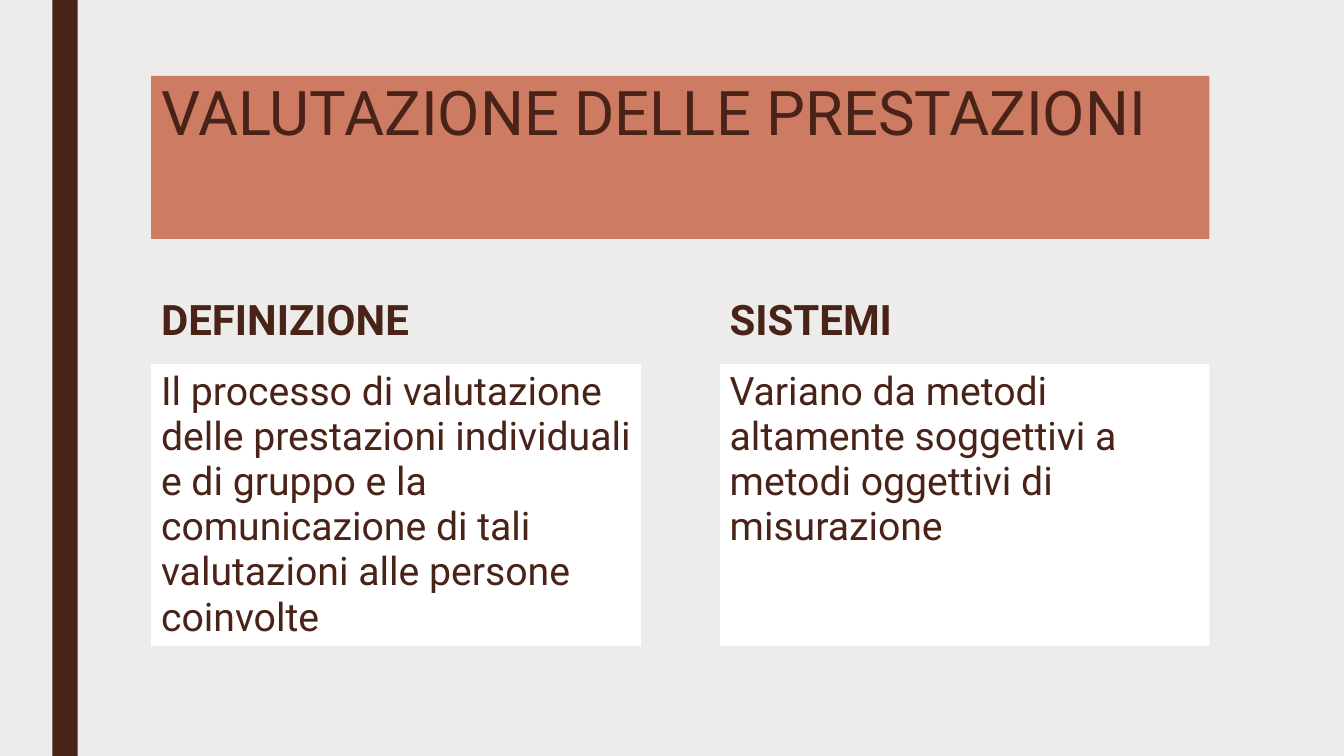
from dataclasses import dataclass

from pptx import Presentation
from pptx.dml.color import RGBColor
from pptx.enum.shapes import MSO_SHAPE
from pptx.enum.text import MSO_ANCHOR, MSO_AUTO_SIZE, PP_ALIGN
from pptx.util import Cm, Pt

RECTANGLE = MSO_SHAPE.RECTANGLE
TOP, BOTTOM = MSO_ANCHOR.TOP, MSO_ANCHOR.BOTTOM
NO_AUTOFIT = MSO_AUTO_SIZE.NONE
LEFT = PP_ALIGN.LEFT

TITLE = "VALUTAZIONE DELLE PRESTAZIONI"
COLUMNS = [
    ("DEFINIZIONE",
     "Il processo di valutazione delle prestazioni individuali e di gruppo "
     "e la comunicazione di tali valutazioni alle persone coinvolte"),
    ("SISTEMI",
     "Variano da metodi altamente soggettivi a metodi oggettivi di misurazione"),
]


@dataclass(frozen=True)
class Theme:
    font: str = "Roboto"
    background: RGBColor = RGBColor(0xED, 0xEC, 0xEB)
    dark: RGBColor = RGBColor(0x4A, 0x23, 0x18)
    accent: RGBColor = RGBColor(0xCD, 0x7B, 0x63)
    panel: RGBColor = RGBColor(0xFF, 0xFF, 0xFF)
    title_size: int = 44
    heading_size: int = 30
    body_size: int = 28


THEME = Theme()
SLIDE_WIDTH, SLIDE_HEIGHT = 33.87, 19.05
CONTENT_LEFT, CONTENT_WIDTH = 3.81, 26.67
COLUMN_WIDTH = 12.34
COLUMN_STEP = CONTENT_WIDTH - COLUMN_WIDTH


def write_text(shape, text, size, line_spacing, anchor=TOP, bold=False):
    frame = shape.text_frame
    frame.word_wrap = True
    frame.auto_size = NO_AUTOFIT
    frame.vertical_anchor = anchor
    frame.margin_left = frame.margin_right = Cm(0.25)
    frame.margin_top = frame.margin_bottom = Cm(0.13)
    paragraph = frame.paragraphs[0]
    paragraph.alignment = LEFT
    paragraph.line_spacing = line_spacing
    paragraph.space_before = Pt(0)
    run = paragraph.add_run()
    run.text = text
    run.font.name = THEME.font
    run.font.size = Pt(size)
    run.font.bold = bold
    run.font.color.rgb = THEME.dark


def add_rectangle(slide, left, top, width, height, color):
    shape = slide.shapes.add_shape(
        RECTANGLE, Cm(left), Cm(top), Cm(width), Cm(height))
    shape.shadow.inherit = False
    shape.fill.solid()
    shape.fill.fore_color.rgb = color
    shape.line.fill.background()
    return shape


def add_title(slide):
    title = slide.shapes.title
    title.left, title.top = Cm(CONTENT_LEFT), Cm(1.91)
    title.width, title.height = Cm(CONTENT_WIDTH), Cm(4.11)
    title.fill.solid()
    title.fill.fore_color.rgb = THEME.accent
    write_text(title, TITLE, THEME.title_size, 0.93)


def add_column(slide, left, heading, body):
    heading_box = slide.shapes.add_textbox(
        Cm(left), Cm(6.5), Cm(COLUMN_WIDTH), Cm(2.29))
    write_text(heading_box, heading, THEME.heading_size, 0.84, BOTTOM, True)
    panel = add_rectangle(slide, left, 9.17, COLUMN_WIDTH, 7.11, THEME.panel)
    write_text(panel, body, THEME.body_size, 0.96)


def main():
    presentation = Presentation()
    presentation.slide_width = Cm(SLIDE_WIDTH)
    presentation.slide_height = Cm(SLIDE_HEIGHT)
    slide = presentation.slides.add_slide(presentation.slide_layouts[5])
    slide.background.fill.solid()
    slide.background.fill.fore_color.rgb = THEME.background
    add_rectangle(slide, 1.32, 0, 0.64, SLIDE_HEIGHT, THEME.dark)
    add_title(slide)
    for index, (heading, body) in enumerate(COLUMNS):
        add_column(slide, CONTENT_LEFT + index * COLUMN_STEP, heading, body)
    presentation.save("out.pptx")


if __name__ == "__main__":
    main()
